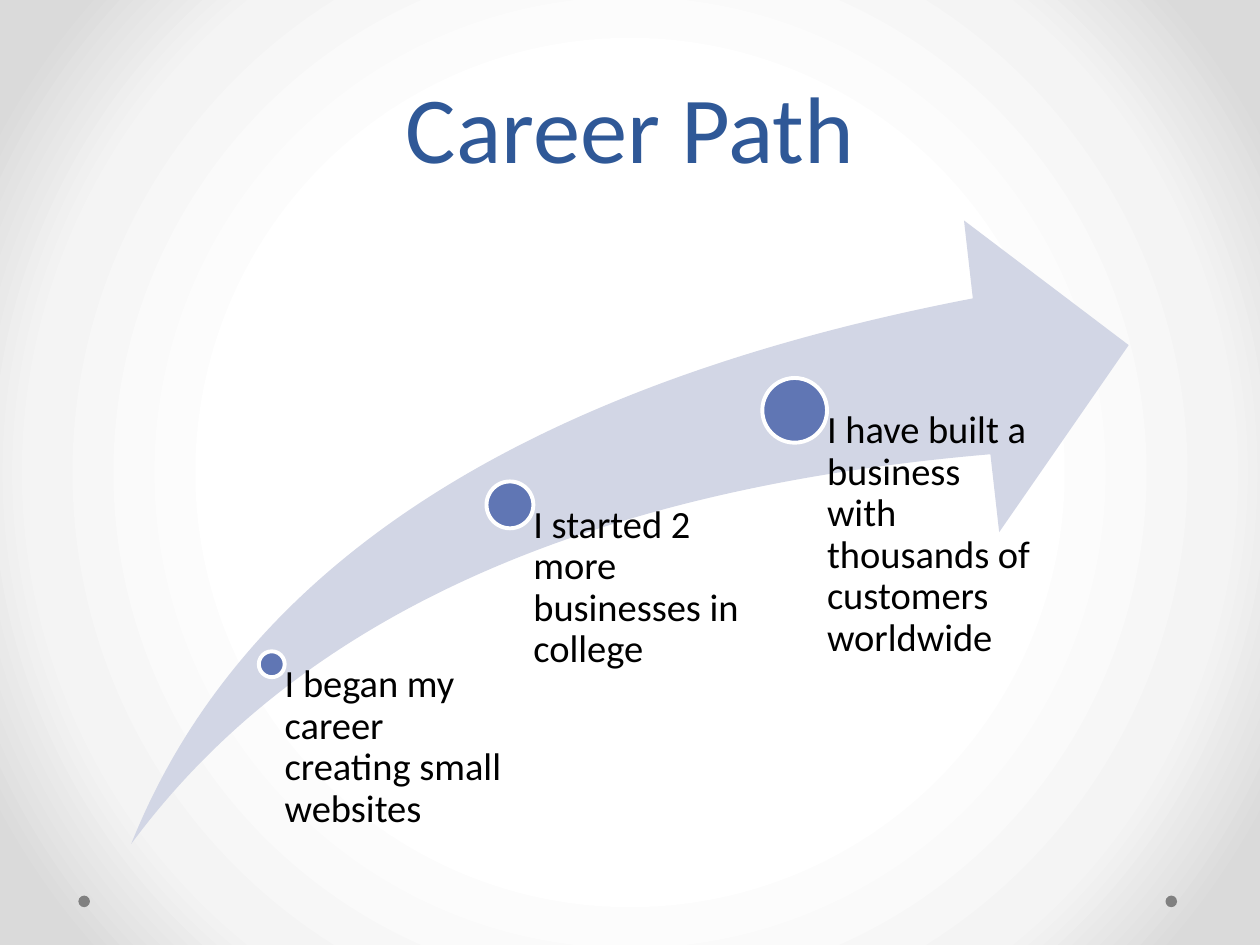
from dataclasses import dataclass

from lxml import etree
from pptx import Presentation
from pptx.dml.color import RGBColor
from pptx.enum.shapes import MSO_SHAPE
from pptx.enum.text import MSO_ANCHOR, MSO_AUTO_SIZE, PP_ALIGN
from pptx.oxml.ns import qn
from pptx.util import Pt

ELLIPSE, SWOOSH = MSO_SHAPE.OVAL, MSO_SHAPE.SWOOSH_ARROW
TOP, BOTTOM = MSO_ANCHOR.TOP, MSO_ANCHOR.BOTTOM
LEFT, CENTER = PP_ALIGN.LEFT, PP_ALIGN.CENTER
NO_FIT = MSO_AUTO_SIZE.NONE
TITLE_ONLY = 5


@dataclass(frozen=True)
class Theme:
    font: str = "Calibri"
    title_size: float = 54
    body_size: float = 22
    title: str = "2F5897"
    text: str = "000000"
    arrow: str = "D2D6E5"
    milestone: str = "6076B4"
    outline: str = "FFFFFF"
    corner_dot: str = "808080"
    background: tuple = ((50, "FFFFFF"), (76, "F4F4F4"), (92, "DADADA"))


THEME = Theme()

# Centre offset from the arrow box, dot diameter, label width, label
MILESTONES = [
    (80.3, 253.6, 14.8, 133.2, "I began my career creating small websites"),
    (216.4, 162.5, 26.8, 136.8, "I started 2 more businesses in college"),
    (379.1, 108.5, 37, 136.8,
     "I have built a business with thousands of customers worldwide"),
]


def set_attributes(target, values):
    for name, value in values.items():
        setattr(target, name, value)


def paint_background(slide):
    """Fill the slide with a circular gradient spreading from its centre."""
    slide.background.fill.gradient()
    gradient = slide.element.find(".//" + qn("a:gradFill"))
    for child in list(gradient):
        gradient.remove(child)
    stops = etree.SubElement(gradient, qn("a:gsLst"))
    for position, color in THEME.background:
        stop = etree.SubElement(stops, qn("a:gs"), pos=str(position * 1000))
        etree.SubElement(stop, qn("a:srgbClr"), val=color)
    circle = etree.SubElement(gradient, qn("a:path"), {"path": "circle"})
    etree.SubElement(circle, qn("a:fillToRect"),
                     {side: "50000" for side in "ltrb"})


def add_filled(shapes, preset, box, color, outline=None):
    shape = shapes.add_shape(preset, *map(Pt, box))
    shape.shadow.inherit = False
    shape.fill.solid()
    shape.fill.fore_color.rgb = RGBColor.from_string(color)
    if outline:
        shape.line.color.rgb = RGBColor.from_string(outline)
        shape.line.width = Pt(2.25)
    else:
        shape.line.fill.background()
    return shape


def write_text(shape, text, frame_format, paragraph_format, size, color):
    frame = shape.text_frame
    set_attributes(frame, {"word_wrap": True, "auto_size": NO_FIT, **frame_format})
    paragraph = frame.paragraphs[0]
    set_attributes(paragraph, paragraph_format)
    run = paragraph.add_run()
    run.text = text
    set_attributes(run.font, {"name": THEME.font, "size": Pt(size)})
    run.font.color.rgb = RGBColor.from_string(color)


def add_title(slide, box, text):
    title = slide.shapes.title
    set_attributes(title, dict(zip(("left", "top", "width", "height"), map(Pt, box))))
    write_text(title, text, {"vertical_anchor": BOTTOM},
               {"alignment": CENTER, "line_spacing": Pt(58)},
               THEME.title_size, THEME.title)


def add_corner_dots(slide, box):
    left, top, width, size = box
    for x in (left, left + width - size):
        add_filled(slide.shapes, ELLIPSE, (x, top, size, size), THEME.corner_dot)


def add_career_arrow(slide, box, milestones):
    """Draw the arrow; each label starts at its dot's centre, inset by the radius."""
    left, top, _, height = box
    shapes = slide.shapes.add_group_shape().shapes
    arrow = add_filled(shapes, SWOOSH, box, THEME.arrow)
    for index in range(2):
        arrow.adjustments[index] = 0.25
    for offset_x, offset_y, diameter, label_width, text in milestones:
        x, y, radius = left + offset_x, top + offset_y, diameter / 2
        add_filled(shapes, ELLIPSE, (x - radius, y - radius, diameter, diameter),
                   THEME.milestone, THEME.outline)
        label = shapes.add_textbox(Pt(x), Pt(y), Pt(label_width),
                                   Pt(height - offset_y))
        write_text(label, text,
                   {"margin_left": Pt(radius), "margin_top": 0, "margin_right": 0,
                    "margin_bottom": 0, "vertical_anchor": TOP},
                   {"alignment": LEFT, "line_spacing": 0.9},
                   THEME.body_size, THEME.text)


def main():
    presentation = Presentation()
    set_attributes(presentation, {"slide_width": Pt(720), "slide_height": Pt(540)})
    slide = presentation.slides.add_slide(presentation.slide_layouts[TITLE_ONLY])
    paint_background(slide)
    add_corner_dots(slide, (44.8, 511.8, 627.8, 6.6))
    add_title(slide, (36, 12, 648, 96), "Career Path")
    add_career_arrow(slide, (75, 126, 570, 356.25), MILESTONES)
    presentation.save("out.pptx")


if __name__ == "__main__":
    main()
